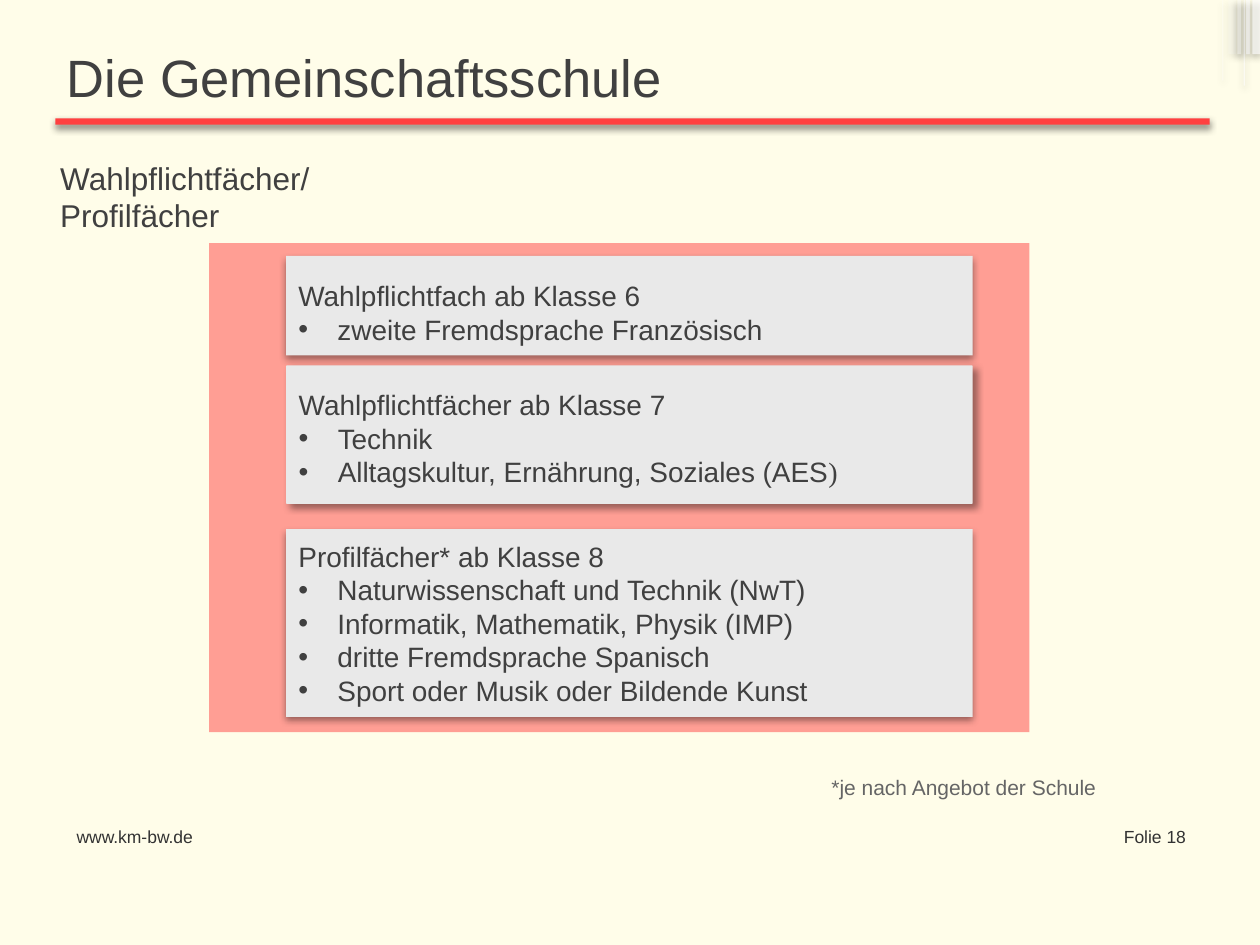
from lxml.etree import SubElement
from pptx import Presentation
from pptx.dml.color import RGBColor
from pptx.enum.shapes import MSO_SHAPE
from pptx.enum.text import MSO_ANCHOR, PP_ALIGN
from pptx.oxml.ns import qn
from pptx.util import Inches, Pt

TITLE = "Die Gemeinschaftsschule"
DARK, RED, GREY = "404040", "FF4040", "E9E9E9"
SOFT, SIDE, RULE = (40, 4.1, 2, 90), (40, 4, 3, 45), (45, 4, 2, 90)

BARS = [
    (9.89, 0.03, 0.43, 65), (9.94, 0.06, 0.43, 65), (9.7, 0.01, 0.64, 30),
    (9.87, 0.01, 0.68, 60), (9.75, 0.06, 0.43, 20), (9.82, 0.03, 0.43, 40),
]
CARDS = [
    (2.03, 0.79, 0, SOFT, 1.4, "Wahlpflichtfach ab Klasse 6",
     ["zweite Fremdsprache Französisch"]),
    (2.9, 1.1, 0.008, SIDE, 1.2, "Wahlpflichtfächer ab Klasse 7",
     ["Technik", "Alltagskultur, Ernährung, Soziales (AES)"]),
    (4.2, 1.49, 0, SOFT, 1, "Profilfächer* ab Klasse 8",
     ["Naturwissenschaft und Technik (NwT)",
      "Informatik, Mathematik, Physik (IMP)",
      "dritte Fremdsprache Spanisch",
      "Sport oder Musik oder Bildende Kunst"]),
]
LABELS = [
    ((0.51, 6.51, 1.33, 0.39), "www.km-bw.de", 10, "323232", PP_ALIGN.LEFT),
    ((8.54, 6.51, 0.97, 0.39), "Folie 18", 10, "323232", PP_ALIGN.RIGHT),
    ((6.5, 6.1, 2.31, 0.3), "*je nach Angebot der Schule", 12, "656565",
     PP_ALIGN.LEFT),
    ((0.38, 1.21, 3.5, 0.7), "Wahlpflichtfächer/\vProfilfächer", 18, DARK,
     PP_ALIGN.LEFT),
]


def paint(fill, tone, alpha=100):
    fill.solid()
    fill.fore_color.rgb = RGBColor.from_string(tone)
    if alpha < 100:
        node = fill._xPr.find(".//" + qn("a:srgbClr"))
        SubElement(node, qn("a:alpha"), val=str(alpha * 1000))


def style(para, size, tone, align=PP_ALIGN.LEFT):
    para.alignment = align
    para.font.size = Pt(size)
    para.font.name = "Arial"
    para.font.color.rgb = RGBColor.from_string(tone)


def block(box, tone, alpha=100, shade=None, adj=None):
    kind = MSO_SHAPE.RECTANGLE if adj is None else MSO_SHAPE.ROUNDED_RECTANGLE
    shape = slide.shapes.add_shape(kind, *map(Inches, box))
    if adj is not None:
        shape.adjustments[0] = adj
    paint(shape.fill, tone, alpha)
    shape.line.fill.background()
    shape.shadow.inherit = False
    if shade:
        dark, blur, dist, turn = shade
        glow = SubElement(
            shape._element.spPr.find(qn("a:effectLst")), qn("a:outerShdw"),
            blurRad=str(Pt(blur)), dist=str(Pt(dist)), dir=str(turn * 60000),
            algn="ctr", rotWithShape="0")
        node = SubElement(glow, qn("a:srgbClr"), val="000000")
        SubElement(node, qn("a:alpha"), val=str(dark * 1000))
    return shape


def bullet(para):
    props = para._p.get_or_add_pPr()
    props.set("marL", str(Inches(0.31)))
    props.set("indent", str(-Inches(0.31)))
    tint = SubElement(props, qn("a:buClr"))
    SubElement(tint, qn("a:srgbClr"), val=DARK)
    SubElement(props, qn("a:buFont"), typeface="Arial")
    SubElement(props, qn("a:buChar"), char="•")


deck = Presentation()
deck.slide_width, deck.slide_height = Inches(10), Inches(7.5)
slide = deck.slides.add_slide(deck.slide_layouts[5])
paint(slide.background.fill, "FFFDE9")

for left, width, height, alpha in BARS:
    block((left, 0, width, height), "FFFFFF", alpha, SOFT)
block((1.66, 1.93, 6.51, 3.88), RED, 50, adj=0)

for top, height, adj, shade, gap, head, items in CARDS:
    card = block((2.27, top, 5.45, height), GREY, shade=shade, adj=adj)
    frame = card.text_frame
    frame.word_wrap = True
    frame.vertical_anchor = MSO_ANCHOR.MIDDLE
    para = frame.paragraphs[0]
    para.text = head
    para.line_spacing = gap
    style(para, 16, DARK)
    for item in items:
        para = frame.add_paragraph()
        bullet(para)
        style(para, 16, DARK)
        if item.endswith("(AES)"):
            para.add_run().text = item[:-1]
            end = para.add_run()
            end.text = item[-1]
            end.font.name = "Times New Roman"
        else:
            para.text = item

block((0.44, 0.94, 9.16, 0.05), RED, shade=RULE)

for box, text, size, tone, align in LABELS:
    frame = slide.shapes.add_textbox(*map(Inches, box)).text_frame
    frame.word_wrap = True
    para = frame.paragraphs[0]
    para.text = text
    style(para, size, tone, align)

title = slide.shapes.title
title.left, title.top, title.width, title.height = map(
    Inches, (0.43, 0.3, 9, 0.62))
title.text_frame.text = TITLE
title.text_frame.vertical_anchor = MSO_ANCHOR.MIDDLE
style(title.text_frame.paragraphs[0], 30, DARK)

deck.save("out.pptx")
